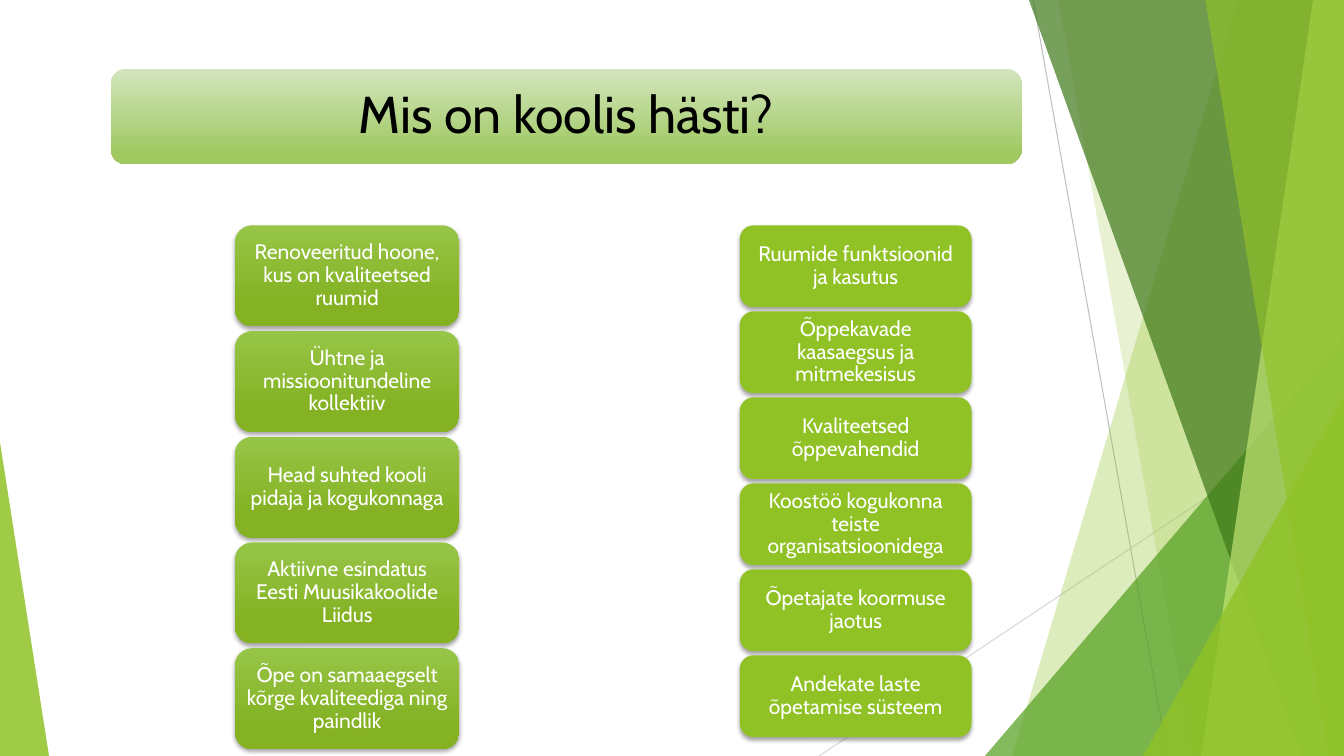
from pptx import Presentation
from pptx.dml.color import RGBColor
from pptx.enum.shapes import MSO_CONNECTOR, MSO_SHAPE
from pptx.enum.text import MSO_ANCHOR, MSO_AUTO_SIZE, PP_ALIGN
from pptx.oxml import parse_xml
from pptx.oxml.ns import nsdecls, qn
from pptx.util import Pt

ROUNDED = MSO_SHAPE.ROUNDED_RECTANGLE
TRIANGLE = MSO_SHAPE.ISOSCELES_TRIANGLE
STRAIGHT = MSO_CONNECTOR.STRAIGHT
MIDDLE = MSO_ANCHOR.MIDDLE
CENTER = PP_ALIGN.CENTER
NO_AUTOFIT = MSO_AUTO_SIZE.NONE

FONT = "Cabin"
BLACK = RGBColor(0x00, 0x00, 0x00)
WHITE = RGBColor(0xFF, 0xFF, 0xFF)
GREY = RGBColor(0xBF, 0xBF, 0xBF)
LIGHT_GREY = RGBColor(0xD9, 0xD9, 0xD9)
LIME = RGBColor(0x90, 0xC2, 0x26)
PALE_LIME = RGBColor(0xC0, 0xE4, 0x74)
GREEN = RGBColor(0x54, 0xA0, 0x21)
DARK_GREEN = RGBColor(0x3F, 0x78, 0x19)
BAR_TOP = RGBColor(0xD3, 0xE5, 0xBE)
BAR_BOTTOM = RGBColor(0xA0, 0xC9, 0x62)
CARD_TOP = RGBColor(0x97, 0xC5, 0x47)
CARD_BOTTOM = RGBColor(0x84, 0xB2, 0x23)

WIDTH, HEIGHT = 960, 540

STRENGTHS = [
    "Renoveeritud hoone, kus on kvaliteetsed ruumid",
    "Ühtne ja missioonitundeline kollektiiv",
    "Head suhted kooli pidaja ja kogukonnaga",
    "Aktiivne esindatus Eesti Muusikakoolide Liidus",
    "Õpe on samaaegselt kõrge kvaliteediga ning paindlik",
]
RESOURCES = [
    "Ruumide funktsioonid ja kasutus",
    "Õppekavade kaasaegsus ja mitmekesisus",
    "Kvaliteetsed õppevahendid",
    "Koostöö kogukonna teiste organisatsioonidega",
    "Õpetajate koormuse jaotus",
    "Andekate laste õpetamise süsteem",
]


def write_text(shape, text, size, color, inset_x, inset_y):
    frame = shape.text_frame
    frame.word_wrap = True
    frame.auto_size = NO_AUTOFIT
    frame.vertical_anchor = MIDDLE
    frame.margin_left = frame.margin_right = Pt(inset_x)
    frame.margin_top = frame.margin_bottom = Pt(inset_y)
    paragraph = frame.paragraphs[0]
    paragraph.alignment = CENTER
    paragraph.line_spacing = 0.9
    run = paragraph.add_run()
    run.text = text
    run.font.name = FONT
    run.font.size = Pt(size)
    run.font.color.rgb = color


def style_solid(shape, color, opacity=100):
    shape.shadow.inherit = False
    shape.line.fill.background()
    shape.fill.solid()
    shape.fill.fore_color.rgb = color
    if opacity < 100:
        for color_element in shape.element.spPr.iter(qn("a:srgbClr")):
            color_element.append(
                parse_xml(f'<a:alpha {nsdecls("a")} val="{opacity * 1000}"/>'))


def style_gradient(shape, top_color, bottom_color, end):
    """Fade downwards, reaching bottom_color at the fraction end."""
    shape.shadow.inherit = False
    shape.line.fill.background()
    shape.fill.gradient()
    shape.fill.gradient_angle = 270
    first, last = shape.fill.gradient_stops
    first.position, first.color.rgb = 0, top_color
    last.position, last.color.rgb = end, bottom_color


def add_drop_shadow(shape):
    effects = shape.element.spPr.find(qn("a:effectLst"))
    effects.append(parse_xml(
        f'<a:outerShdw {nsdecls("a")} blurRad="{Pt(3)}" dist="{Pt(2)}" '
        'dir="5400000" algn="ctr" rotWithShape="0"><a:srgbClr val="000000">'
        '<a:alpha val="35000"/></a:srgbClr></a:outerShdw>'))


def add_thin_line(slide, start, end, color):
    line = slide.shapes.add_connector(STRAIGHT, *map(Pt, start + end))
    line.line.color.rgb = color
    line.line.width = Pt(0.75)
    line.element.spPr.append(parse_xml(f'<a:effectLst {nsdecls("a")}/>'))


def add_edge_band(slide, top_x, bottom_x, color, opacity):
    """Fill from a slanted left side to the right edge of the slide."""
    builder = slide.shapes.build_freeform(Pt(top_x), 0)
    builder.add_line_segments([
        (Pt(WIDTH), 0), (Pt(WIDTH), Pt(HEIGHT)), (Pt(bottom_x), Pt(HEIGHT))])
    style_solid(builder.convert_to_shape(), color, opacity)


def add_corner_triangle(slide, left, top, width, apex, color, opacity):
    """Stand a right triangle on the bottom edge; apex 0 is left, 1 right."""
    triangle = slide.shapes.add_shape(
        TRIANGLE, Pt(left), Pt(top), Pt(width), Pt(HEIGHT - top))
    triangle.adjustments[0] = apex
    style_solid(triangle, color, opacity)


def add_backdrop(slide):
    add_thin_line(slide, (738, 0), (834, HEIGHT), GREY)
    add_thin_line(slide, (WIDTH, 290), (585, HEIGHT), LIGHT_GREY)
    add_edge_band(slide, 884, 723, LIME, 30)
    add_edge_band(slide, 756, 852, LIME, 20)
    add_corner_triangle(slide, 703.5, 240, 256.5, 1, GREEN, 72)
    add_edge_band(slide, 735, 929.5, DARK_GREEN, 70)
    add_edge_band(slide, 938, 858, PALE_LIME, 70)
    add_edge_band(slide, 861, 949, LIME, 65)
    add_corner_triangle(slide, 816.5, 283, 143.5, 1, LIME, 80)
    add_corner_triangle(slide, 0, 316, 35, 0, LIME, 85)


def add_title_bar(slide, text, left, top, width, height):
    bar = slide.shapes.add_shape(
        ROUNDED, Pt(left), Pt(top), Pt(width), Pt(height))
    style_gradient(bar, BAR_TOP, BAR_BOTTOM, 0.88)
    title = slide.shapes.title
    padding = 3.4
    title.left, title.top = Pt(left + padding), Pt(top + padding)
    title.width = Pt(width - 2 * padding)
    title.height = Pt(height - 2 * padding)
    write_text(title, text, 37, BLACK, 10.8, 10.8)
    bar.element.addnext(title.element)


def add_card_column(slide, texts, left, top, width, height, gap, shaded):
    """Stack equal cards in the box, shaded with a gradient or plain."""
    card_height = (height - gap * (len(texts) - 1)) / len(texts)
    for index, text in enumerate(texts):
        card_top = top + index * (card_height + gap)
        card = slide.shapes.add_shape(
            ROUNDED, Pt(left), Pt(card_top), Pt(width), Pt(card_height))
        if shaded:
            style_gradient(card, CARD_TOP, CARD_BOTTOM, 0.78)
        else:
            style_solid(card, LIME)
        add_drop_shadow(card)
        write_text(card, text, 15, WHITE, 4.5, 2.25)


def main():
    presentation = Presentation()
    presentation.slide_width = Pt(WIDTH)
    presentation.slide_height = Pt(HEIGHT)
    slide = presentation.slides.add_slide(presentation.slide_layouts[5])
    add_backdrop(slide)
    add_title_bar(slide, "Mis on koolis hästi?", 79, 49, 651, 68.4)
    add_card_column(slide, STRENGTHS, 168, 161, 160, 374, 3.5, True)
    add_card_column(slide, RESOURCES, 528.5, 161, 165.5, 365.5, 3, False)
    presentation.save("out.pptx")


if __name__ == "__main__":
    main()
